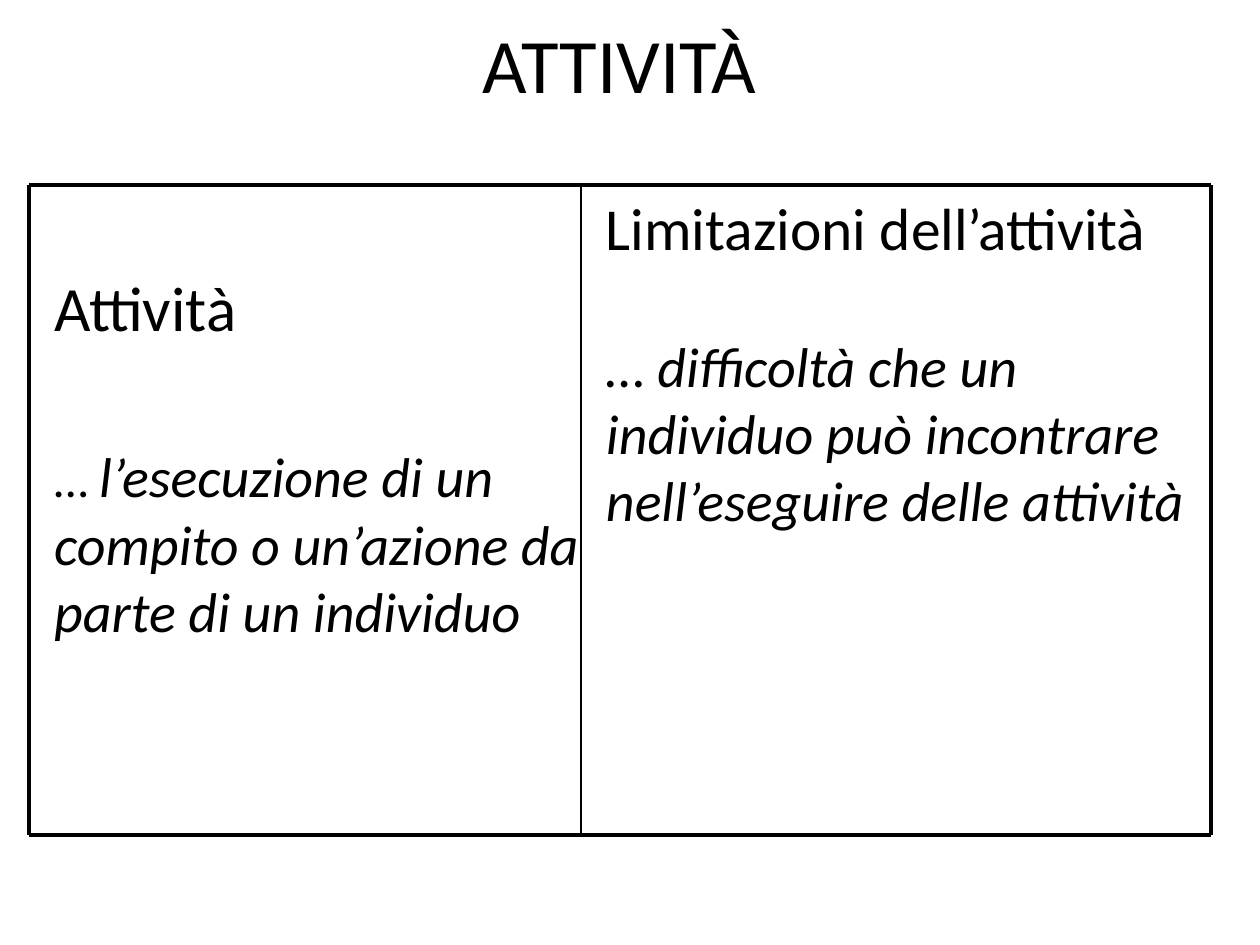
from pptx import Presentation
from pptx.dml.color import RGBColor
from pptx.enum.shapes import MSO_CONNECTOR
from pptx.enum.text import MSO_ANCHOR, PP_ALIGN
from pptx.oxml.ns import qn
from pptx.util import Inches, Pt
from lxml import etree

BLACK = RGBColor(0, 0, 0)
FONT = "Calibri"
STRAIGHT = MSO_CONNECTOR.STRAIGHT
TOP = MSO_ANCHOR.TOP
LEFT = PP_ALIGN.LEFT
CENTER = PP_ALIGN.CENTER

deck = Presentation()
deck.slide_width = Inches(10)
deck.slide_height = Inches(7.5)
page = deck.slides.add_slide(deck.slide_layouts[6])


def add_text(bounds, paragraphs, align=LEFT, side=0.2, top=0.05, gap=0):
    box = page.shapes.add_textbox(*[Inches(length) for length in bounds])
    frame = box.text_frame
    frame.word_wrap = True
    frame.vertical_anchor = TOP
    frame.margin_left = frame.margin_right = Inches(side)
    frame.margin_top = Inches(top)
    frame.margin_bottom = Inches(0.05)
    for index, spans in enumerate(paragraphs):
        para = frame.add_paragraph() if index else frame.paragraphs[0]
        para.alignment = align
        para.space_before = Pt(gap if index else 0)
        for text, size, italic in spans:
            span = para.add_run()
            span.text = text
            span.font.name = FONT
            span.font.size = Pt(size)
            span.font.italic = italic
            span.font.color.rgb = BLACK


left, middle, right = 0.23, 4.61, 9.61
top, bottom = 1.47, 6.63
height = 5.17

add_text((0.25, 0.08, 9.33, 1.25), [[("ATTIVITÀ", 44, False)]],
         align=CENTER, side=0.1)

add_text((middle, top, right - middle, height), [
    [("Limitazioni dell’attività", 34, False)],
    [("… ", 32, False),
     ("difficoltà che un individuo può incontrare nell’eseguire delle attività", 32, True)],
], gap=39)

add_text((left, top, 4.61, height), [
    [("Attività", 36, False)],
    [("… ", 28, False),
     ("l’esecuzione di un compito o un’azione da parte di un individuo", 32, True)],
], top=0.66, gap=56)

frame_lines = [
    (left, top, right, top, 2.25),
    (left, bottom, right, bottom, 2.25),
    (left, top, left, bottom, 2.25),
    (middle, top, middle, bottom, 1),
    (right, top, right, bottom, 2.25),
]
for *ends, width in frame_lines:
    line = page.shapes.add_connector(STRAIGHT, *[Inches(length) for length in ends])
    line.line.color.rgb = BLACK
    line.line.width = Pt(width)
    etree.SubElement(line._element.spPr, qn("a:effectLst"))

deck.save("out.pptx")
